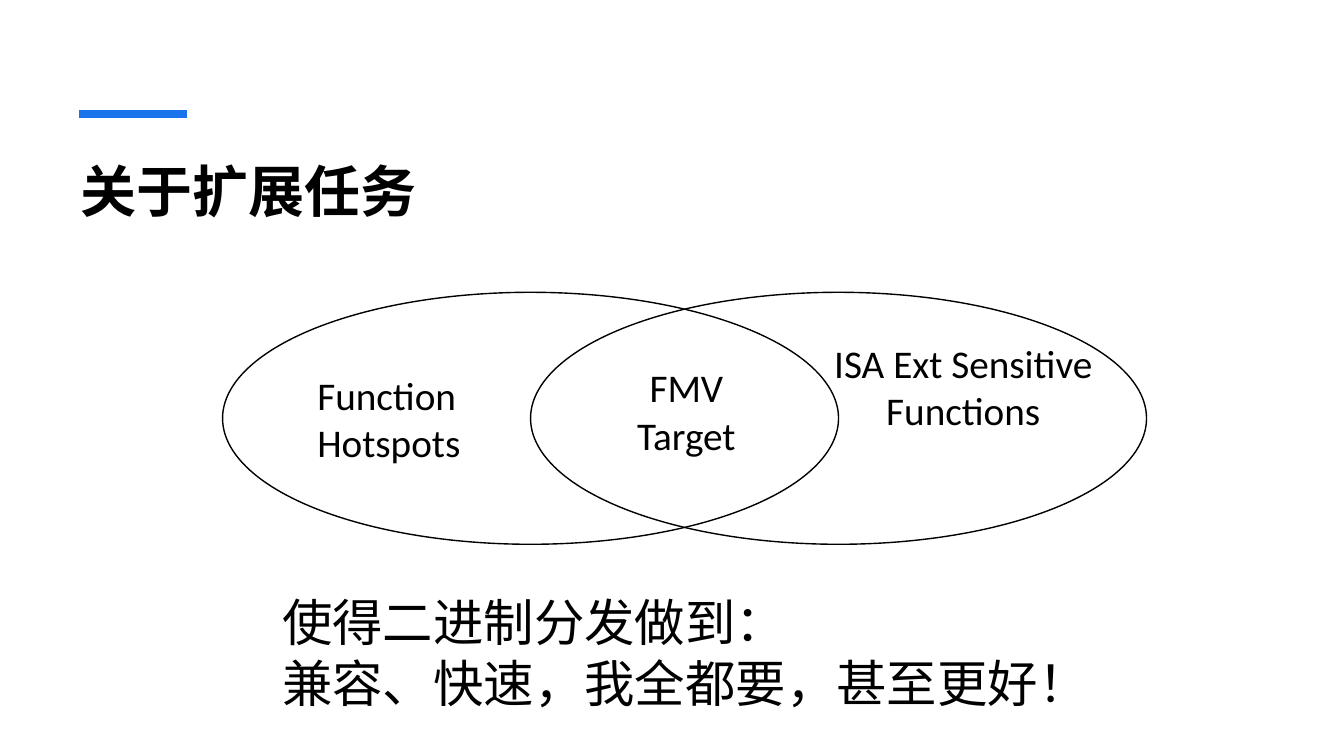
import pptx
import pptx.util
import pptx.dml.color
import pptx.enum.shapes
import pptx.enum.text
import lxml.etree

Pt = pptx.util.Pt
ALIGN = pptx.enum.text.PP_ALIGN
BLACK = pptx.dml.color.RGBColor(0x00, 0x00, 0x00)
BLUE = pptx.dml.color.RGBColor(0x19, 0x73, 0xEB)


def write_lines(box, lines, size, align, bold=False):
    frame = box.text_frame
    frame.word_wrap = True
    frame.vertical_anchor = pptx.enum.text.MSO_ANCHOR.TOP
    frame.text = "\n".join(lines)
    font_format = {"name": "Calibri", "size": Pt(size), "bold": bold}
    for para in frame.paragraphs:
        para.alignment = align
        for span in para.runs:
            for name, value in font_format.items():
                setattr(span.font, name, value)
            span.font.color.rgb = BLACK


deck = pptx.Presentation()
deck.slide_width = Pt(960)
deck.slide_height = Pt(540)
page = deck.slides.add_slide(deck.slide_layouts[5])

accent = page.shapes.add_connector(
    pptx.enum.shapes.MSO_CONNECTOR.STRAIGHT, Pt(56.5), Pt(81.4), Pt(133.5), Pt(81.4)
)
accent.line.color.rgb = BLUE
accent.line.width = Pt(6)
lxml.etree.SubElement(
    accent.element.spPr, "{http://schemas.openxmlformats.org/drawingml/2006/main}effectLst"
)

title = page.shapes.title
title_place = {"left": 50.4, "top": 108, "width": 857.5, "height": 86.4}
for name, value in title_place.items():
    setattr(title, name, Pt(value))
write_lines(title, ["关于扩展任务"], 40, ALIGN.LEFT, bold=True)
title.text_frame.auto_size = pptx.enum.text.MSO_AUTO_SIZE.NONE

for left in (159, 379):
    ellipse = page.shapes.add_shape(
        pptx.enum.shapes.MSO_SHAPE.OVAL, Pt(left), Pt(208.8), Pt(440), Pt(180)
    )
    ellipse.shadow.inherit = False
    ellipse.fill.background()
    ellipse.line.color.rgb = BLACK
    ellipse.line.width = Pt(1)

labels = [
    (219.6, 261.4, 160, 75, 28, ALIGN.LEFT, ["Function", "Hotspots"]),
    (578.2, 239, 219.6, 108.7, 28, ALIGN.CENTER, ["ISA Ext Sensitive", "Functions"]),
    (432.7, 256.3, 115.2, 75, 28, ALIGN.CENTER, ["FMV", "Target"]),
    (194.4, 419, 604, 94.3, 36, ALIGN.LEFT,
     ["使得二进制分发做到：", "兼容、快速，我全都要，甚至更好！"]),
]
for left, top, width, height, size, align, lines in labels:
    box = page.shapes.add_textbox(Pt(left), Pt(top), Pt(width), Pt(height))
    write_lines(box, lines, size, align)
    box.text_frame.auto_size = pptx.enum.text.MSO_AUTO_SIZE.SHAPE_TO_FIT_TEXT

deck.save("out.pptx")
